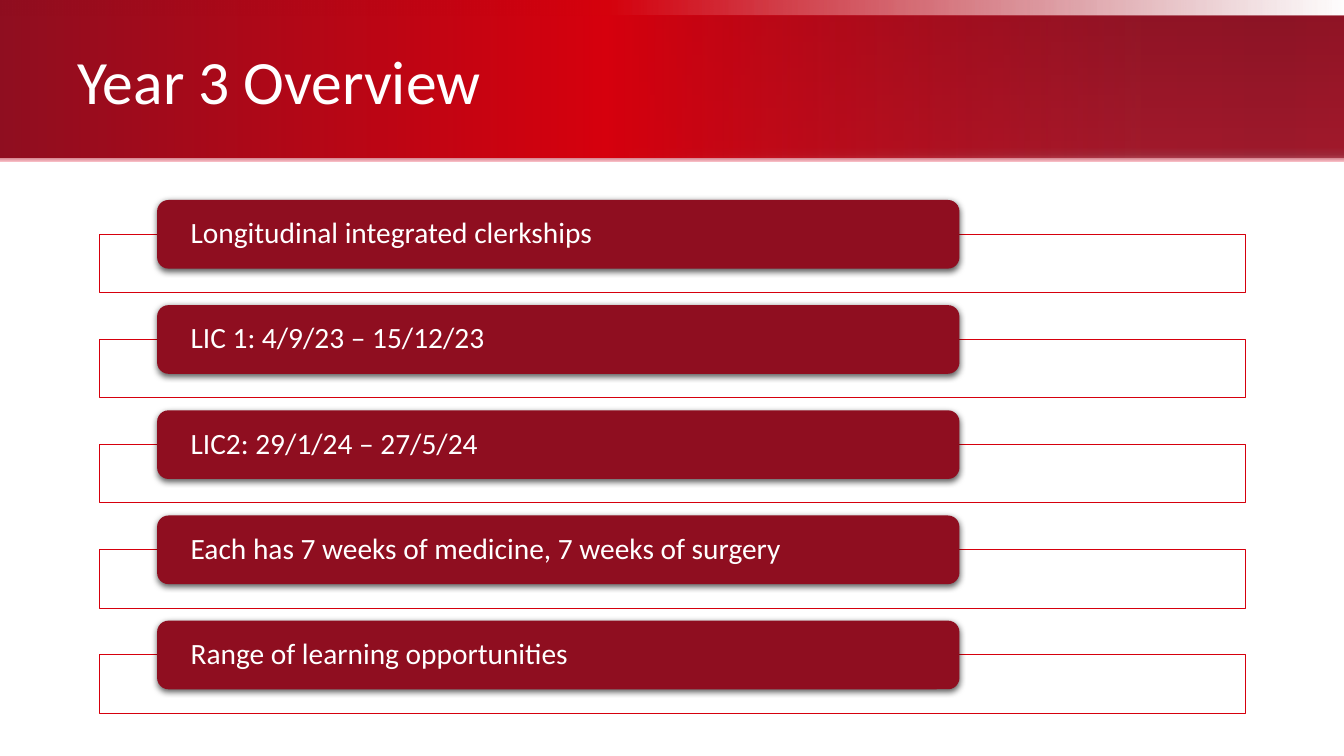
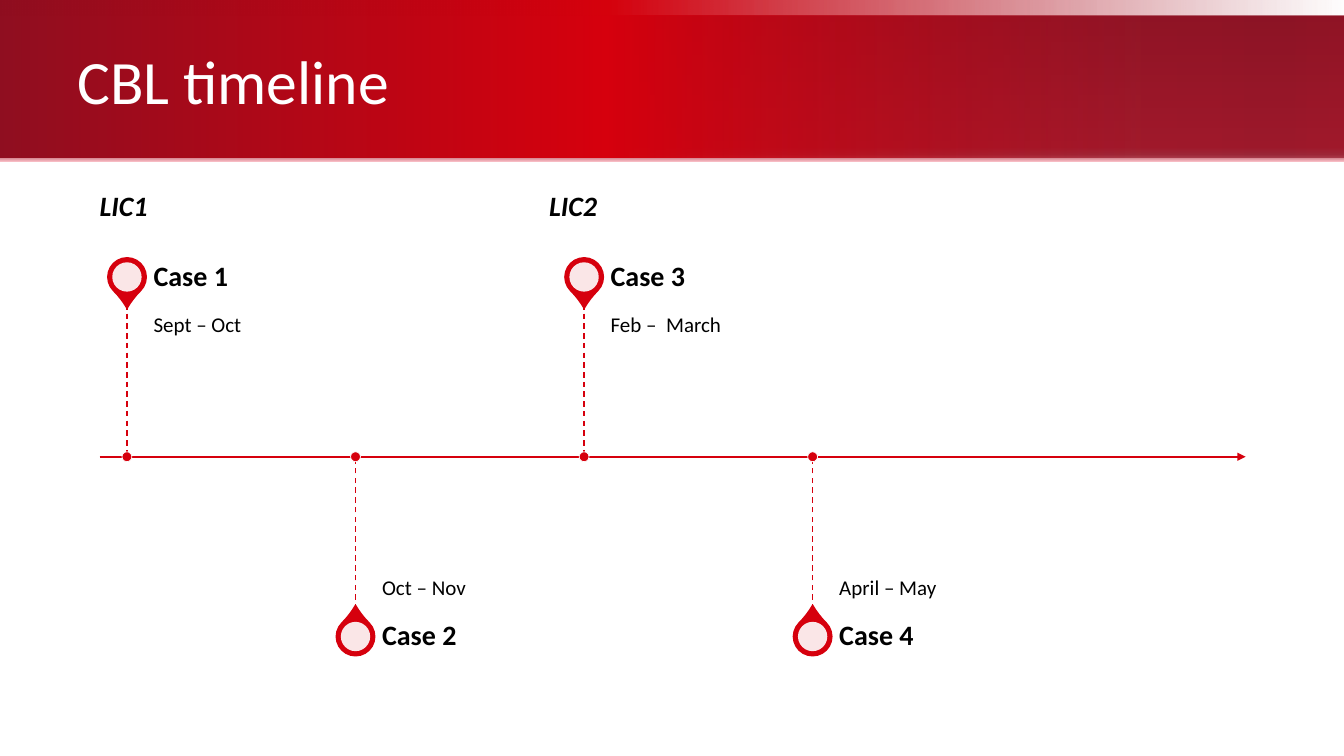
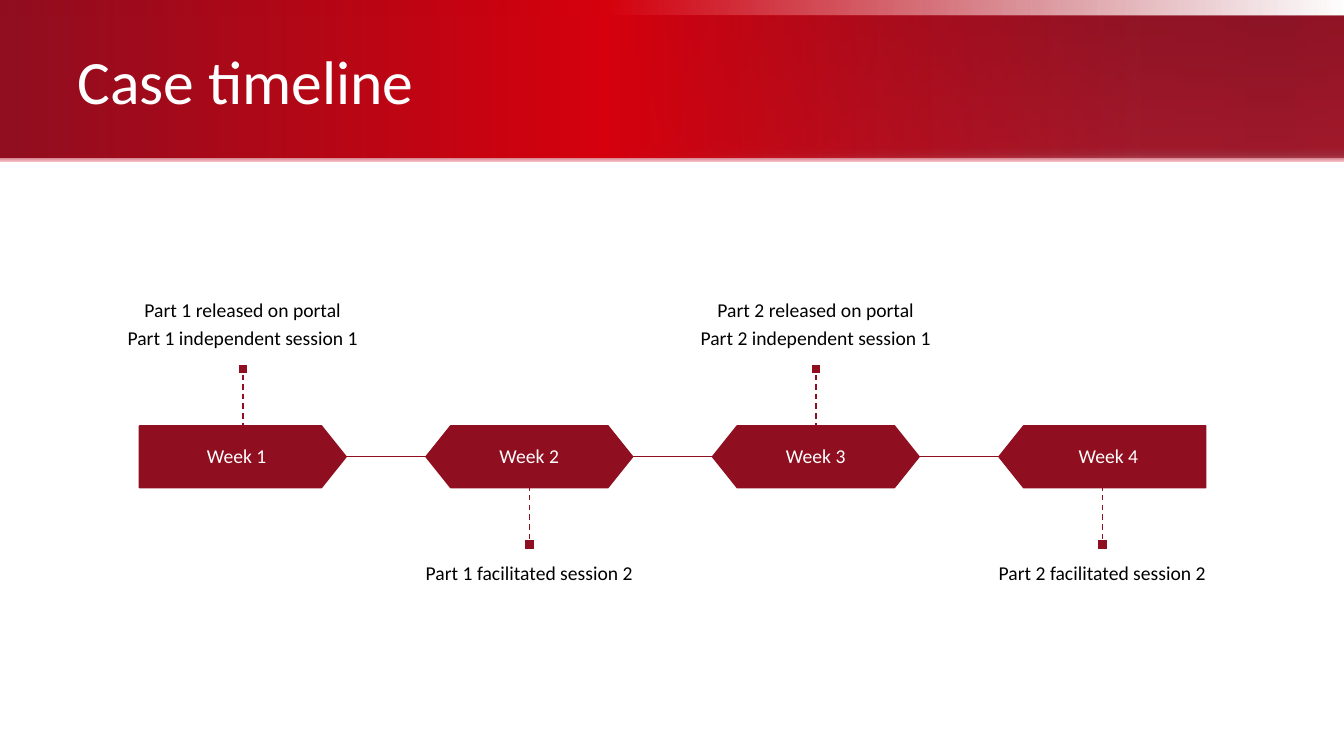
from dataclasses import dataclass

from lxml.etree import SubElement
from pptx import Presentation
from pptx.dml.color import RGBColor
from pptx.enum.dml import MSO_LINE
from pptx.enum.shapes import MSO_CONNECTOR, MSO_SHAPE
from pptx.enum.text import MSO_ANCHOR, MSO_AUTO_SIZE, PP_ALIGN
from pptx.oxml.ns import qn
from pptx.shapes.autoshape import Shape
from pptx.shapes.connector import Connector
from pptx.slide import Slide
from pptx.text.text import TextFrame
from pptx.util import Cm, Pt


@dataclass(frozen=True)
class Theme:
    font: str = "Calibri"
    red: str = "D6000D"
    maroon: str = "8F0E20"
    white: str = "FFFFFF"
    black: str = "000000"
    title_size: float = 44
    bar_size: float = 21
    heading_size: float = 20
    date_size: float = 15
    week_size: float = 14
    width: float = 33.87
    height: float = 19.05
    left: float = 2.51
    content_width: float = 28.88
    axis: float = 11.51


T = Theme()


@dataclass(frozen=True)
class Box:
    left: float
    top: float
    width: float
    height: float


@dataclass(frozen=True)
class Stop:
    position: int
    color: str
    opacity: int = 100


@dataclass(frozen=True)
class Band:
    box: Box
    angle: int
    stops: tuple[Stop, ...]


@dataclass(frozen=True)
class Style:
    size: float
    color: str = T.black
    bold: bool = False
    italic: bool = False
    align: PP_ALIGN = PP_ALIGN.LEFT


@dataclass(frozen=True)
class Case:
    name: str
    dates: str


@dataclass(frozen=True)
class Week:
    name: str
    events: tuple[str, ...]
    shape: MSO_SHAPE
    flipped: bool = False


BANDS = (
    Band(Box(0, 0, T.width, 0.42), 0,
         (Stop(0, T.maroon), Stop(45, T.red), Stop(100, T.maroon, 0))),
    Band(Box(0, 0.4, T.width, 3.68), 270,
         (Stop(0, "931E2F"), Stop(90, "BA2A3C"), Stop(95, "B54E5C"), Stop(100, "F9BFC7"))),
    Band(Box(0, 0.4, T.width, 3.56), 0,
         (Stop(0, T.maroon), Stop(45, T.red), Stop(85, T.maroon, 60),
          Stop(95, "890D1F", 60), Stop(100, T.maroon, 60))),
)
TOPICS = (
    "Longitudinal integrated clerkships",
    "LIC 1: 4/9/23 – 15/12/23",
    "LIC2: 29/1/24 – 27/5/24",
    "Each has 7 weeks of medicine, 7 weeks of surgery",
    "Range of learning opportunities",
)
CASES = (
    Case("Case 1", "Sept – Oct"),
    Case("Case 2", "Oct – Nov"),
    Case("Case 3", "Feb –  March"),
    Case("Case 4", "April – May"),
)
WEEKS = (
    Week("Week 1", ("Part 1 released on portal", "Part 1 independent session 1"),
         MSO_SHAPE.PENTAGON),
    Week("Week 2", ("Part 1 facilitated session 2",), MSO_SHAPE.HEXAGON),
    Week("Week 3", ("Part 2 released on portal", "Part 2 independent session 1"),
         MSO_SHAPE.HEXAGON),
    Week("Week 4", ("Part 2 facilitated session 2",), MSO_SHAPE.PENTAGON, True),
)


def around(x: float, y: float, width: float, height: float) -> Box:
    return Box(x - width / 2, y - height / 2, width, height)


def lengths(box: Box) -> tuple[Cm, Cm, Cm, Cm]:
    return Cm(box.left), Cm(box.top), Cm(box.width), Cm(box.height)


def add_shape(s: Slide, kind: MSO_SHAPE, box: Box, fill: str = T.white,
              line: str | None = None, weight: float = 1, opacity: int = 100) -> Shape:
    sp = s.shapes.add_shape(kind, *lengths(box))
    sp.shadow.inherit = False
    sp.fill.solid()
    sp.fill.fore_color.rgb = RGBColor.from_string(fill)
    if opacity < 100:
        color = sp._element.spPr.find(qn("a:solidFill"))[0]
        SubElement(color, qn("a:alpha"), val=str(opacity * 1000))
    if line:
        sp.line.color.rgb = RGBColor.from_string(line)
        sp.line.width = Pt(weight)
    else:
        sp.line.fill.background()
    return sp


def add_line(s: Slide, x1: float, y1: float, x2: float, y2: float, color: str,
             weight: float = 1, dashed: bool = False) -> Connector:
    line = s.shapes.add_connector(MSO_CONNECTOR.STRAIGHT, Cm(x1), Cm(y1), Cm(x2), Cm(y2))
    line.line.color.rgb = RGBColor.from_string(color)
    line.line.width = Pt(weight)
    if dashed:
        line.line.dash_style = MSO_LINE.DASH
    SubElement(line._element.spPr, qn("a:effectLst"))
    return line


def write(tf: TextFrame, lines: tuple[str, ...], style: Style,
          anchor: MSO_ANCHOR = MSO_ANCHOR.MIDDLE, side: float = 0, ends: float = 0) -> None:
    tf.word_wrap = True
    tf.auto_size = MSO_AUTO_SIZE.NONE
    tf.vertical_anchor = anchor
    tf.margin_left = tf.margin_right = Cm(side)
    tf.margin_top = tf.margin_bottom = Cm(ends)
    for i, text in enumerate(lines):
        p = tf.add_paragraph() if i else tf.paragraphs[0]
        p.alignment = style.align
        p.line_spacing = 0.9
        if i:
            p.space_before = Pt(5)
        r = p.add_run()
        r.text = text
        r.font.name = T.font
        r.font.size = Pt(style.size)
        r.font.bold = style.bold
        r.font.italic = style.italic
        r.font.color.rgb = RGBColor.from_string(style.color)


def add_text(s: Slide, box: Box, lines: tuple[str, ...], style: Style,
             anchor: MSO_ANCHOR = MSO_ANCHOR.MIDDLE, ends: float = 0) -> None:
    tb = s.shapes.add_textbox(*lengths(box))
    write(tb.text_frame, lines, style, anchor, ends=ends)


def apply_gradient(sp: Shape, band: Band) -> None:
    sp.fill.gradient()
    sp.fill.gradient_angle = band.angle
    stops = sp._element.spPr.find(qn("a:gradFill")).find(qn("a:gsLst"))
    for old in list(stops):
        stops.remove(old)
    for stop in band.stops:
        gs = SubElement(stops, qn("a:gs"), pos=str(stop.position * 1000))
        color = SubElement(gs, qn("a:srgbClr"), val=stop.color)
        SubElement(color, qn("a:alpha"), val=str(stop.opacity * 1000))


def dress_layout(s: Slide) -> None:
    layout = s.slide_layout
    title = layout.placeholders[0]
    title.left, title.top, title.width, title.height = lengths(Box(1.7, 0.4, 28.05, 3.48))
    for i, band in enumerate(BANDS):
        sp = add_shape(s, MSO_SHAPE.RECTANGLE, band.box)
        apply_gradient(sp, band)
        sp._element.nvSpPr.cNvPr.set("id", str(20 + i))
        layout.shapes._spTree.insert(2 + i, sp._element)


def set_title(s: Slide, text: str) -> None:
    write(s.shapes.title.text_frame, (text,), Style(T.title_size, T.white),
          side=0.25, ends=0.13)


def add_shadow(sp: Shape) -> None:
    effects = sp._element.spPr.find(qn("a:effectLst"))
    shadow = SubElement(effects, qn("a:outerShdw"), blurRad=str(Pt(4.5)),
                        dist=str(Pt(1.5)), dir="5400000", algn="ctr", rotWithShape="0")
    color = SubElement(shadow, qn("a:srgbClr"), val=T.black)
    SubElement(color, qn("a:alpha"), val="63000")


def draw_overview(s: Slide) -> None:
    pitch = 2.65
    for i, topic in enumerate(TOPICS):
        top = 5.04 + i * pitch
        add_shape(s, MSO_SHAPE.RECTANGLE, Box(T.left, top + 0.86, T.content_width, 1.47),
                  line=T.red, weight=0.5, opacity=90)
        bar = add_shape(s, MSO_SHAPE.ROUNDED_RECTANGLE, Box(3.96, top, 20.22, 1.73), T.maroon)
        add_shadow(bar)
        write(bar.text_frame, (topic,), Style(T.bar_size, T.white), side=0.76)


def draw_case(s: Slide, case: Case, x: float, above: bool) -> None:
    side = -1 if above else 1
    pin_y = T.axis + side * 4.53
    stem = 3.85
    text_left = x + 0.67
    pin = add_shape(s, MSO_SHAPE.TEAR, around(x, pin_y, 0.97, 0.97), T.red, T.red)
    pin.adjustments[0] = 1.15
    pin.rotation = 135 if above else 315
    add_shape(s, MSO_SHAPE.OVAL, around(x, pin_y, 0.74, 0.74), opacity=90)
    add_text(s, Box(text_left, T.axis - stem if above else T.axis, 9.6, stem),
             (case.dates,), Style(T.date_size),
             MSO_ANCHOR.TOP if above else MSO_ANCHOR.BOTTOM, 0.25)
    add_text(s, Box(text_left, pin_y - 0.67, 9.6, 1.35), (case.name,),
             Style(T.heading_size, bold=True))
    add_line(s, x, T.axis + side * stem, x, T.axis, T.red, dashed=True)
    add_shape(s, MSO_SHAPE.OVAL, around(x, T.axis, 0.25, 0.25), T.red, T.white, 0.5)


def draw_cases(s: Slide) -> None:
    arrow = add_line(s, T.left, T.axis, T.left + T.content_width, T.axis, T.red, 1.5)
    SubElement(arrow.line._get_or_add_ln(), qn("a:tailEnd"), type="triangle")
    for i, case in enumerate(CASES):
        draw_case(s, case, 3.2 + i * 5.76, above=i % 2 == 0)
    for left, name in ((T.left, "LIC1"), (13.84, "LIC2")):
        add_text(s, Box(left, 4.55, 9.6, 1.35), (name,),
                 Style(T.heading_size, bold=True, italic=True))


def draw_weeks(s: Slide) -> None:
    pitch = T.content_width / len(WEEKS)
    width, height = 5.21, 1.56
    label_gap, label_height = 2.34, 4.17
    for i, week in enumerate(WEEKS):
        x = T.left + (i + 0.5) * pitch
        above = i % 2 == 0
        side = -1 if above else 1
        block = add_shape(s, week.shape, around(x, T.axis, width, height), T.maroon, T.maroon)
        block.adjustments[0] = 0.4
        if week.flipped:
            block._element.spPr.xfrm.set("flipH", "1")
        write(block.text_frame, (week.name,),
              Style(T.week_size, T.white, align=PP_ALIGN.CENTER))
        label_top = T.axis - label_gap - label_height if above else T.axis + label_gap
        add_text(s, Box(x - pitch / 2, label_top, pitch, label_height), week.events,
                 Style(T.week_size, align=PP_ALIGN.CENTER),
                 MSO_ANCHOR.BOTTOM if above else MSO_ANCHOR.TOP, 0.36)
        if i < len(WEEKS) - 1:
            add_line(s, x + width / 2, T.axis, x + pitch - width / 2, T.axis, T.maroon)
        add_line(s, x, T.axis + side * 2.08, x, T.axis + side * height / 2, T.maroon, dashed=True)
        add_shape(s, MSO_SHAPE.RECTANGLE, around(x, T.axis + side * 2.21, 0.25, 0.25),
                  T.maroon, T.white)


def main() -> None:
    prs = Presentation()
    prs.slide_width, prs.slide_height = Cm(T.width), Cm(T.height)
    pages = (
        ("Year 3 Overview", draw_overview),
        ("CBL timeline", draw_cases),
        ("Case timeline", draw_weeks),
    )
    for i, (title, draw) in enumerate(pages):
        s = prs.slides.add_slide(prs.slide_layouts[5])
        if i == 0:
            dress_layout(s)
        set_title(s, title)
        draw(s)
    prs.save("out.pptx")


if __name__ == "__main__":
    main()
